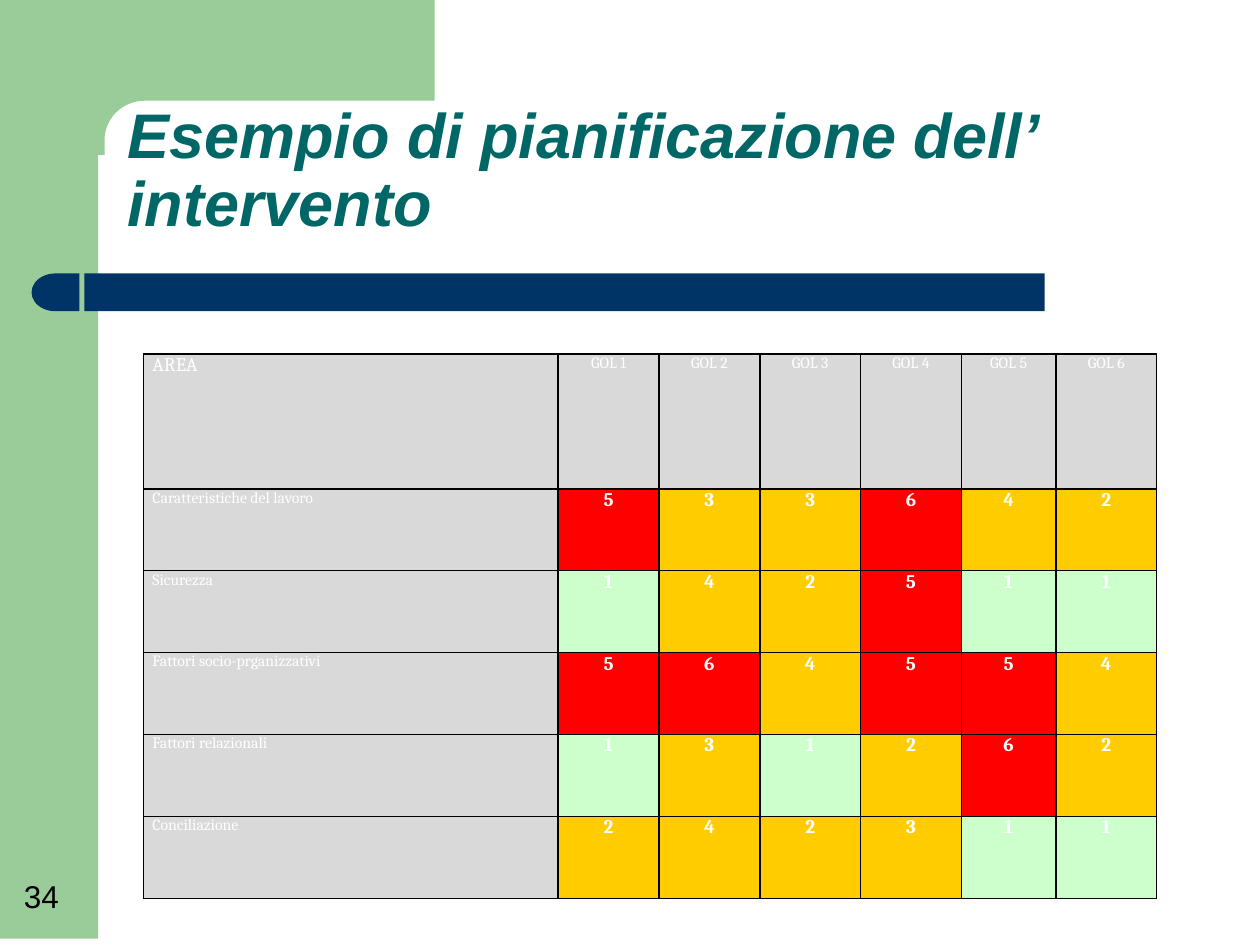
from dataclasses import dataclass
from math import cos, pi, sin

from lxml.etree import SubElement
from pptx import Presentation
from pptx.dml.color import RGBColor
from pptx.enum.shapes import MSO_SHAPE
from pptx.enum.text import MSO_ANCHOR, MSO_AUTO_SIZE, PP_ALIGN
from pptx.oxml.ns import qn
from pptx.util import Inches, Pt


@dataclass(frozen=True)
class Theme:
    """Colours, fonts and type sizes of the deck."""

    band: str = "99CC99"
    bar: str = "003366"
    title: str = "006666"
    ink: str = "000000"
    cell_text: str = "FFFFFF"
    label: str = "D9D9D9"
    high: str = "FF0000"
    medium: str = "FFCC00"
    low: str = "CCFFCC"
    sans: str = "Arial"
    serif: str = "Cambria"
    title_size: int = 36
    number_size: int = 18
    score_size: int = 11
    label_size: int = 9

    def priority(self, score):
        """Return the fill for a risk score."""
        if score >= 5:
            return self.high
        return self.medium if score >= 2 else self.low


def apply(target, values):
    """Set each attribute named in values."""
    for name, value in values.items():
        setattr(target, name, value)


def boxed(left, top, width, height):
    """Turn lengths in inches into position values."""
    return {
        "left": Inches(left),
        "top": Inches(top),
        "width": Inches(width),
        "height": Inches(height),
    }


class SlideBuilder:
    """Holds the theme and the current slide."""

    def __init__(self, page, theme):
        """Keep the page and its style."""
        self.page = page
        self.theme = theme

    def add_text(self, frame, text, color, font, paragraph=None):
        """Put one formatted paragraph into a text frame."""
        para = frame.paragraphs[0]
        apply(para, paragraph or {})
        span = para.add_run()
        span.text = text
        apply(span.font, font)
        span.font.color.rgb = RGBColor.from_string(color)

    def paint(self, shape, color):
        """Give a shape a plain fill without line or shadow."""
        shape.shadow.inherit = False
        shape.fill.solid()
        shape.fill.fore_color.rgb = RGBColor.from_string(color)
        shape.line.fill.background()

    def block(self, kind, place, color, rotation=0):
        """Add a plain preset shape."""
        shape = self.page.shapes.add_shape(kind, **boxed(*place))
        shape.rotation = rotation
        self.paint(shape, color)

    def corner(self):
        """Add the upper band with its rounded inner corner."""
        steps = 16
        angles = [pi / 2 * step / steps for step in range(steps + 1)]
        curve = [(1.15 - 0.32 * sin(a), 1.11 - 0.31 * cos(a)) for a in angles]
        points = [(3.45, 0.8), *curve, (0.83, 1.23), (0.5, 1.23), (0.5, 0)]
        builder = self.page.shapes.build_freeform(
            Inches(3.45), 0, scale=1.0
        )
        builder.add_line_segments(
            [(Inches(x), Inches(y)) for x, y in points], close=True
        )
        self.paint(builder.convert_to_shape(), self.theme.band)

    def title(self, text, place):
        """Fill the title placeholder and bring it to the front."""
        theme = self.theme
        title = self.page.shapes.title
        apply(title, boxed(*place))
        frame = title.text_frame
        apply(frame, {
            "word_wrap": True,
            "auto_size": MSO_AUTO_SIZE.NONE,
            "vertical_anchor": MSO_ANCHOR.BOTTOM,
        })
        font = {"name": theme.sans, "size": Pt(theme.title_size),
                "bold": True, "italic": True}
        self.add_text(frame, text, theme.title, font,
                      {"alignment": PP_ALIGN.LEFT, "line_spacing": 0.9})
        title.element.getparent().append(title.element)

    def number(self, text, place):
        """Add the slide number."""
        theme = self.theme
        box = self.page.shapes.add_textbox(**boxed(*place))
        apply(box.text_frame,
              {"word_wrap": True, "vertical_anchor": MSO_ANCHOR.BOTTOM})
        self.add_text(box.text_frame, text, theme.ink,
                      {"name": theme.sans, "size": Pt(theme.number_size)})

    def border(self, cell):
        """Draw a thin line on all four sides of a cell."""
        properties = cell._tc.get_or_add_tcPr()
        for index, side in enumerate(("lnL", "lnR", "lnT", "lnB")):
            line = SubElement(properties, qn(f"a:{side}"), w=str(Pt(1)))
            fill = SubElement(line, qn("a:solidFill"))
            SubElement(fill, qn("a:srgbClr"), val=self.theme.ink)
            properties.insert(index, line)

    def cell(self, cell, text, fill, size, bold, alignment):
        """Fill and format one table cell."""
        apply(cell, {
            "margin_left": Inches(0.07), "margin_right": Inches(0.07),
            "margin_top": 0, "margin_bottom": 0,
            "vertical_anchor": MSO_ANCHOR.TOP,
        })
        cell.fill.solid()
        cell.fill.fore_color.rgb = RGBColor.from_string(fill)
        font = {"name": self.theme.serif, "size": Pt(size), "bold": bold}
        self.add_text(cell.text_frame, text, self.theme.cell_text, font,
                      {"alignment": alignment, "space_after": Pt(6)})
        self.border(cell)

    def score_table(self, header, scores, place, widths, heights):
        """Add the table of areas and coloured scores."""
        theme = self.theme
        rows = [header, *([area, *values] for area, values in scores.items())]
        table = self.page.shapes.add_table(
            len(rows), len(header), **boxed(*place)
        ).table
        apply(table, {"first_row": False, "horz_banding": False})
        for column, width in zip(table.columns, widths):
            column.width = Inches(width)
        for row, height in zip(table.rows, heights):
            row.height = Inches(height)
        for r, values in enumerate(rows):
            for c, value in enumerate(values):
                is_score = isinstance(value, int)
                large = is_score or r == c == 0
                self.cell(
                    table.cell(r, c),
                    str(value),
                    theme.priority(value) if is_score else theme.label,
                    theme.score_size if large else theme.label_size,
                    is_score,
                    PP_ALIGN.CENTER if c else PP_ALIGN.JUSTIFY,
                )


def main():
    """Build and save the deck."""
    deck = Presentation()
    apply(deck, {"slide_width": Inches(10), "slide_height": Inches(7.5)})
    theme = Theme()
    slide = SlideBuilder(deck.slides.add_slide(deck.slide_layouts[5]), theme)
    slide.block(MSO_SHAPE.RECTANGLE, (0, 0, 0.78, 7.45), theme.band)
    slide.corner()
    slide.block(MSO_SHAPE.RECTANGLE, (0.67, 2.17, 7.62, 0.3), theme.bar)
    slide.block(MSO_SHAPE.FLOWCHART_DELAY, (0.25, 2.17, 0.38, 0.3),
                theme.bar, rotation=180)
    slide.title("Esempio di pianificazione dell’ intervento",
                (0.91, 0.78, 8.46, 1.18))
    slide.number("34", (0.09, 6.83, 0.59, 0.48))
    scores = {
        "Caratteristiche del lavoro": (5, 3, 3, 6, 4, 2),
        "Sicurezza": (1, 4, 2, 5, 1, 1),
        "Fattori socio-prganizzativi": (5, 6, 4, 5, 5, 4),
        "Fattori relazionali": (1, 3, 1, 2, 6, 2),
        "Conciliazione": (2, 4, 2, 3, 1, 1),
    }
    header = ["AREA", *(f"GOL {group}" for group in range(1, 7))]
    slide.score_table(header, scores, (1.14, 2.81, 8.03, 4.33),
                      [3.29, *[0.8] * 4, 0.75, 0.8], [1.07, *[0.65] * 5])
    deck.save("out.pptx")


if __name__ == "__main__":
    main()
